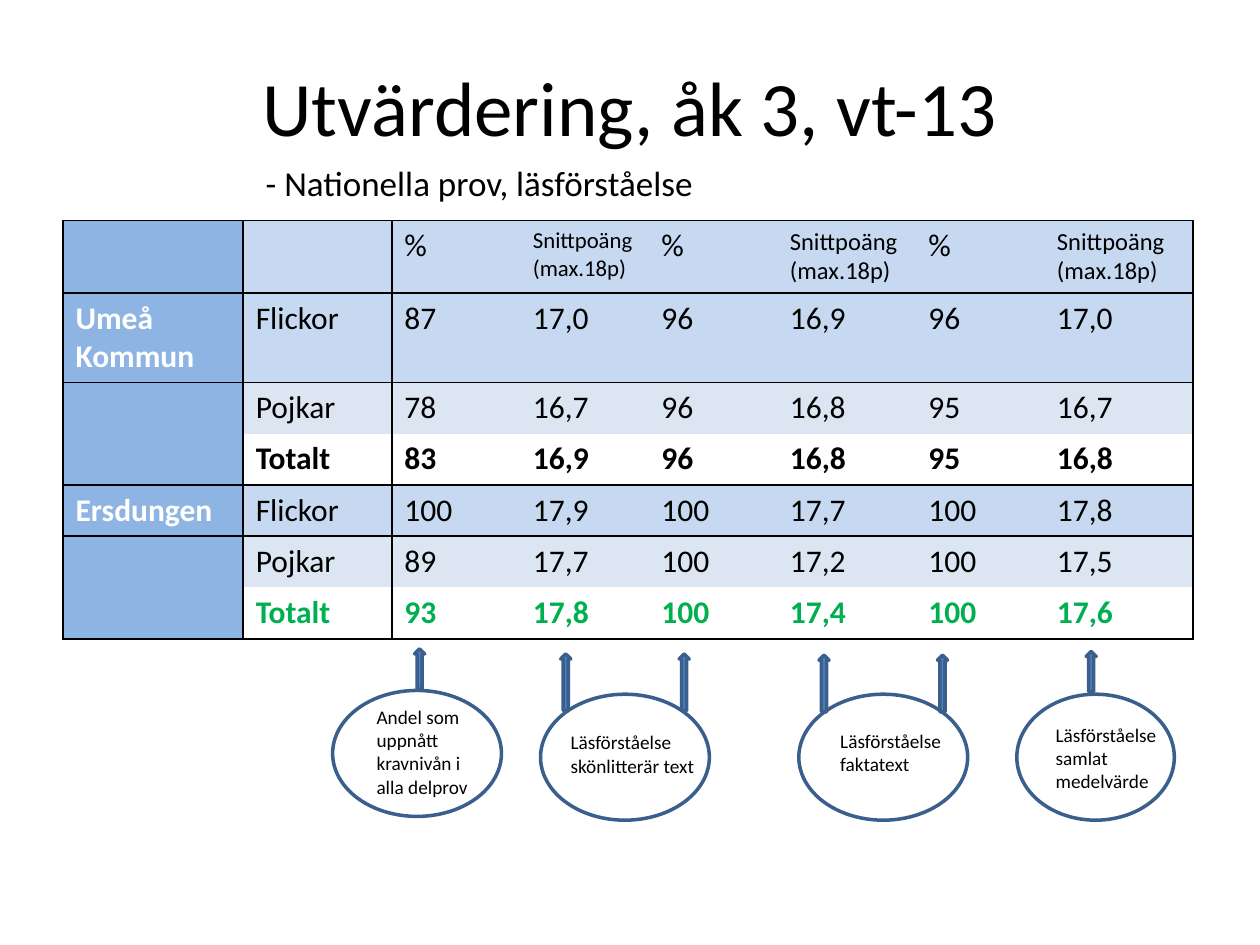
import pptx
import pptx.util
import pptx.dml.color
import pptx.enum.shapes
import pptx.enum.text
import pptx.oxml
import pptx.oxml.ns

Inches, Pt = pptx.util.Inches, pptx.util.Pt
RGB = pptx.dml.color.RGBColor
SHAPE = pptx.enum.shapes.MSO_SHAPE
ALIGN = pptx.enum.text.PP_ALIGN
ANCHOR = pptx.enum.text.MSO_ANCHOR

BLACK = RGB(0, 0, 0)
WHITE = RGB(0xFF, 0xFF, 0xFF)
GREEN = RGB(0x00, 0xB0, 0x50)
SIDE = RGB(0x8E, 0xB4, 0xE3)
LIGHT = RGB(0xC6, 0xD9, 0xF1)
PALE = RGB(0xDC, 0xE6, 0xF2)
BLUE = RGB(0x4F, 0x81, 0xBD)
EDGE = RGB(0x3A, 0x5F, 0x8C)

PLAIN_STYLE = "{2D5ABB26-0587-4C30-8999-92F81FD0307C}"
COLS = [1.43, 1.18, 1.02, 1.02, 1.02, 1.1, 1.02, 1.18]
SCORE = "Snittpoäng (max.18p)"
ROWS = [
    ["", "", "%", SCORE, "%", SCORE, "%", SCORE],
    ["Umeå Kommun", "Flickor", "87", "17,0", "96", "16,9", "96", "17,0"],
    ["", "Pojkar", "78", "16,7", "96", "16,8", "95", "16,7"],
    ["", "Totalt", "83", "16,9", "96", "16,8", "95", "16,8"],
    ["Ersdungen", "Flickor", "100", "17,9", "100", "17,7", "100", "17,8"],
    ["", "Pojkar", "89", "17,7", "100", "17,2", "100", "17,5"],
    ["", "Totalt", "93", "17,8", "100", "17,4", "100", "17,6"],
]
FILLS = {"Flickor": LIGHT, "": LIGHT, "Pojkar": PALE, "Totalt": None}

# Oval box, arrow offsets, arrow top, arrow height, label box, label
NOTES = [
    ((2.64, 5.48, 1.34, 1), [0.65], -0.33, 0.32, (0.25, 0.07, 1.1, 0.84),
     "Andel som uppnått kravnivån i alla delprov"),
    ((4.29, 5.51, 1.34, 1), [0.16, 1.1], -0.32, 0.45, (0.14, 0.24, 1.26, 0.47),
     "Läsförståelse skönlitterär text"),
    ((6.34, 5.51, 1.34, 1), [0.16, 1.1], -0.31, 0.45, (0.23, 0.23, 1.18, 0.47),
     "Läsförståelse faktatext"),
    ((8.07, 5.51, 1.25, 1), [0.55], -0.34, 0.32, (0.21, 0.18, 1.1, 0.66),
     "Läsförståelse samlat medelvärde"),
]


def set_font(font, size, color=BLACK, bold=False):
    values = {"name": "Calibri", "size": Pt(size), "bold": bold}
    for key, value in values.items():
        setattr(font, key, value)
    font.color.rgb = color


def add_text(slide, box, text, size, align=ALIGN.LEFT, anchor=ANCHOR.TOP):
    frame = slide.shapes.add_textbox(*map(Inches, box)).text_frame
    for key, value in {"word_wrap": True, "vertical_anchor": anchor}.items():
        setattr(frame, key, value)
    para = frame.paragraphs[0]
    para.text, para.alignment = text, align
    set_font(para.runs[0].font, size)


def add_mark(slide, kind, box, fill=None):
    shape = slide.shapes.add_shape(kind, *map(Inches, box))
    shape.shadow.inherit = False
    if fill is None:
        shape.fill.background()
    else:
        shape.fill.solid()
        shape.fill.fore_color.rgb = fill
    shape.line.color.rgb = EDGE
    shape.line.width = Pt(2)


def add_note(slide, box, arrows, rise, height, label, text):
    """Draw an oval with its label, and arrows up to the table."""
    left, top = box[:2]
    add_mark(slide, SHAPE.OVAL, box)
    for shift in arrows:
        add_mark(slide, SHAPE.UP_ARROW,
                 (left + shift, top + rise, 0.08, height), BLUE)
    dx, dy, wide, high = label
    add_text(slide, (left + dx, top + dy, wide, high), text, 11)


def set_edges(cell, row, col):
    """Frame the header, each place and the first column."""
    edges = {"lnL": col < 2, "lnR": col in (0, 7),
             "lnT": row in (0, 1, 4), "lnB": row in (0, 3, 6)}
    props = cell._tc.get_or_add_tcPr()
    names = [name for name, shown in edges.items() if shown]
    for spot, name in enumerate(names):
        props.insert(spot, pptx.oxml.parse_xml(
            f'<a:{name} {pptx.oxml.ns.nsdecls("a")} w="12700"><a:solidFill>'
            f'<a:srgbClr val="{BLACK}"/></a:solidFill></a:{name}>'))


def fill_cell(cell, row, col):
    fill = SIDE if col == 0 else FILLS[ROWS[row][1]]
    if fill is None:
        cell.fill.background()
    else:
        cell.fill.solid()
        cell.fill.fore_color.rgb = fill
    set_edges(cell, row, col)
    text = ROWS[row][col]
    para = cell.text_frame.paragraphs[0]
    para.text = text
    total = ROWS[row][1] == "Totalt"
    size = 18
    if text == SCORE:
        size = 13 if col == 3 else 14
    color = WHITE if col == 0 else GREEN if row == 6 else BLACK
    set_font(para.font, size, color, col == 0 or total)
    for run in para.runs:
        set_font(run.font, size, color, col == 0 or total)


def add_scores(slide, box):
    table = slide.shapes.add_table(len(ROWS), len(COLS), *map(Inches, box)).table
    for key in ("first_row", "horz_banding"):
        setattr(table, key, False)
    table._tbl.tblPr.find(pptx.oxml.ns.qn("a:tableStyleId")).text = PLAIN_STYLE
    for col, width in zip(table.columns, COLS):
        col.width = Inches(width)
    for row in range(len(ROWS)):
        table.rows[row].height = Inches(box[3] / len(ROWS))
        for col in range(len(COLS)):
            fill_cell(table.cell(row, col), row, col)


def main():
    deck = pptx.Presentation()
    deck.slide_width, deck.slide_height = Inches(10), Inches(7.5)
    slide = deck.slides.add_slide(deck.slide_layouts[6])
    add_scores(slide, (0.5, 1.75, 8.99, 2.85))
    add_text(slide, (0.5, 0.21, 9, 1.25), "Utvärdering, åk 3, vt-13", 44,
             ALIGN.CENTER, ANCHOR.MIDDLE)
    add_text(slide, (2.01, 1.23, 5.91, 0.44),
             "- Nationella prov, läsförståelse", 20)
    for note in NOTES:
        add_note(slide, *note)
    deck.save("out.pptx")


if __name__ == "__main__":
    main()
